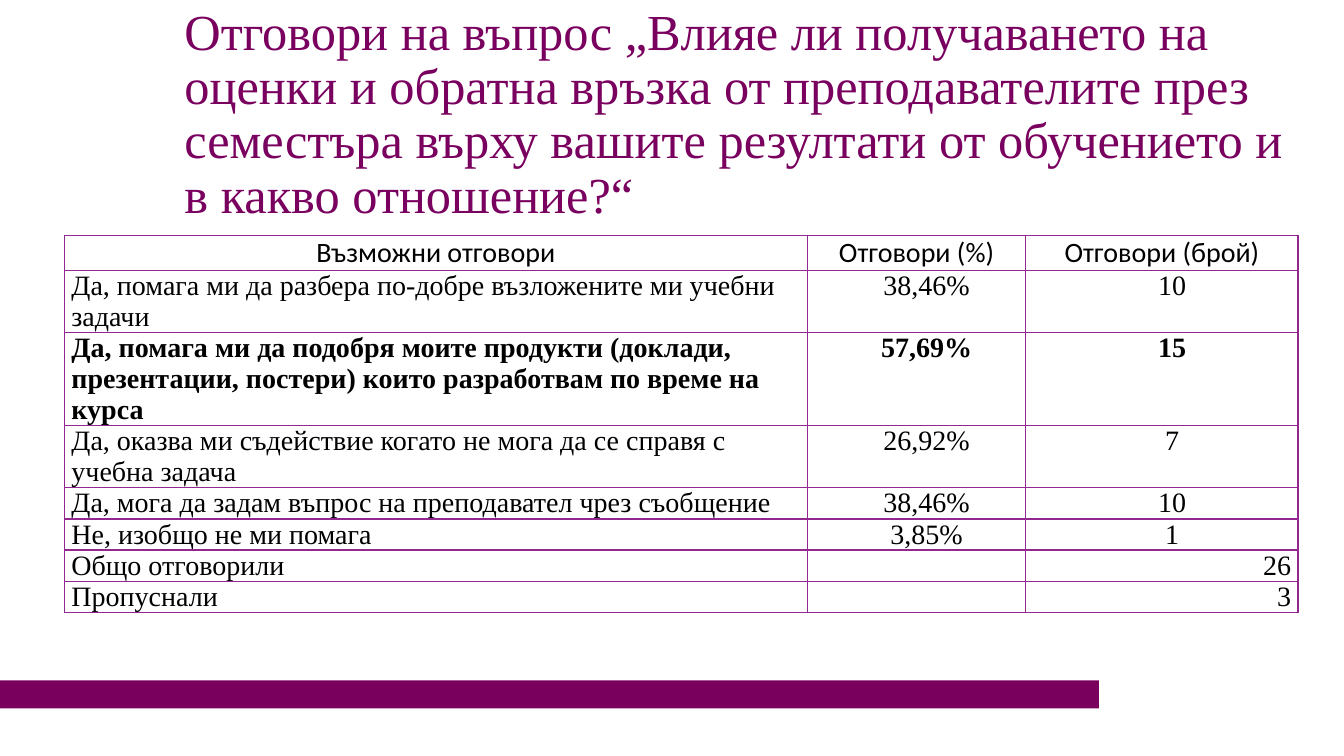
import pptx
import pptx.dml.color
import pptx.enum.shapes
import pptx.enum.text
import pptx.oxml
import pptx.oxml.ns
import pptx.util

Pt = pptx.util.Pt
Align = pptx.enum.text.PP_ALIGN
Anchor = pptx.enum.text.MSO_ANCHOR

COLORS = {"bar": "7A005E", "title": "7A005F", "border": "92278F", "text": "000000"}
SERIF, SANS = "Times New Roman", "Calibri"

TITLE = (
    "\vОтговори на въпрос „Влияе ли получаването на оценки и обратна връзка "
    "от преподавателите през семестъра върху вашите резултати от обучението "
    "и в какво отношение?“"
)
HEADER = ("Възможни отговори", "Отговори (%)", "Отговори (брой)")
ANSWERS = [
    ("Да, помага ми да разбера по-добре възложените ми учебни задачи", "38,46%", "10"),
    ("Да, помага ми да подобря моите продукти (доклади, презентации, постери) "
     "които разработвам по време на курса", "57,69%", "15"),
    ("Да, оказва ми съдействие когато не мога да се справя с учебна задача", "26,92%", "7"),
    ("Да, мога да задам въпрос на преподавател чрез съобщение", "38,46%", "10"),
    ("Не, изобщо не ми помага", "3,85%", "1"),
]
TOTALS = [("Общо отговорили", "", "26"), ("Пропуснали", "", "3")]
TOP_ANSWER = ANSWERS[1]


class SurveySlide:
    """Hold the style and the current slide, and add its elements."""

    def __init__(self, deck):
        self.page = deck.slides.add_slide(deck.slide_layouts[5])

    def color(self, name):
        return pptx.dml.color.RGBColor.from_string(COLORS[name])

    def style(self, para, size, font, color, align, bold=False):
        para.alignment = align
        para.font.size = Pt(size)
        para.font.name = font
        para.font.bold = bold
        para.font.color.rgb = self.color(color)

    def bar(self, left, top, width, height):
        box = self.page.shapes.add_shape(
            pptx.enum.shapes.MSO_SHAPE.RECTANGLE, Pt(left), Pt(top), Pt(width), Pt(height))
        box.shadow.inherit = False
        box.fill.solid()
        box.fill.fore_color.rgb = self.color("bar")
        box.line.fill.background()

    def title(self, text, left, top, width, height):
        box = self.page.shapes.title
        box.left, box.top, box.width, box.height = Pt(left), Pt(top), Pt(width), Pt(height)
        frame = box.text_frame
        frame.text = text
        frame.word_wrap = True
        frame.auto_size = pptx.enum.text.MSO_AUTO_SIZE.NONE
        frame.vertical_anchor = Anchor.MIDDLE
        para = frame.paragraphs[0]
        para.line_spacing = 0.9
        self.style(para, 36, SERIF, "title", Align.LEFT)

    def borders(self, cell):
        properties = cell._tc.get_or_add_tcPr()
        for position, side in enumerate("LRTB"):
            line = pptx.oxml.parse_xml(
                f'<a:ln{side} {pptx.oxml.ns.nsdecls("a")} w="{Pt(1)}"><a:solidFill>'
                f'<a:srgbClr val="{COLORS["border"]}"/></a:solidFill></a:ln{side}>')
            properties.insert(position, line)

    def cell(self, cell, text, font, align, bold=False, indent=0, anchor=Anchor.TOP):
        cell.text = text
        cell.margin_left = cell.margin_right = Pt(5)
        cell.margin_top = cell.margin_bottom = Pt(0)
        cell.vertical_anchor = anchor
        cell.fill.background()
        self.borders(cell)
        para = cell.text_frame.paragraphs[0]
        if indent:
            para._p.get_or_add_pPr().set("indent", str(Pt(indent)))
        self.style(para, 20, font, "text", align, bold)

    def table(self, left, top, widths, header_height, row_height):
        rows = ANSWERS + TOTALS
        height = header_height + row_height * len(rows)
        table = self.page.shapes.add_table(
            len(rows) + 1, len(widths), Pt(left), Pt(top), Pt(sum(widths)), Pt(height)).table
        table.first_row = table.horz_banding = False
        for column, width in zip(table.columns, widths):
            column.width = Pt(width)
        table.rows[0].height = Pt(header_height)
        for column, text in enumerate(HEADER):
            self.cell(table.cell(0, column), text, SANS, Align.CENTER, anchor=Anchor.MIDDLE)
        for index, row in enumerate(rows, 1):
            table.rows[index].height = Pt(row_height)
            number_align = Align.RIGHT if row in TOTALS else Align.CENTER
            for column, text in enumerate(row):
                align, indent = (number_align, 14.4) if column else (Align.LEFT, 0)
                self.cell(table.cell(index, column), text, SERIF, align,
                          row == TOP_ANSWER, indent)


def main():
    deck = pptx.Presentation()
    deck.slide_width, deck.slide_height = Pt(960), Pt(540)
    slide = SurveySlide(deck)
    slide.bar(0, 486, 785, 20)
    slide.title(TITLE, 124.5, 10.8, 813.6, 104.4)
    slide.table(46, 168.5, (530.6, 156.2, 194.4), 23, 21)
    deck.save("out.pptx")


if __name__ == "__main__":
    main()
